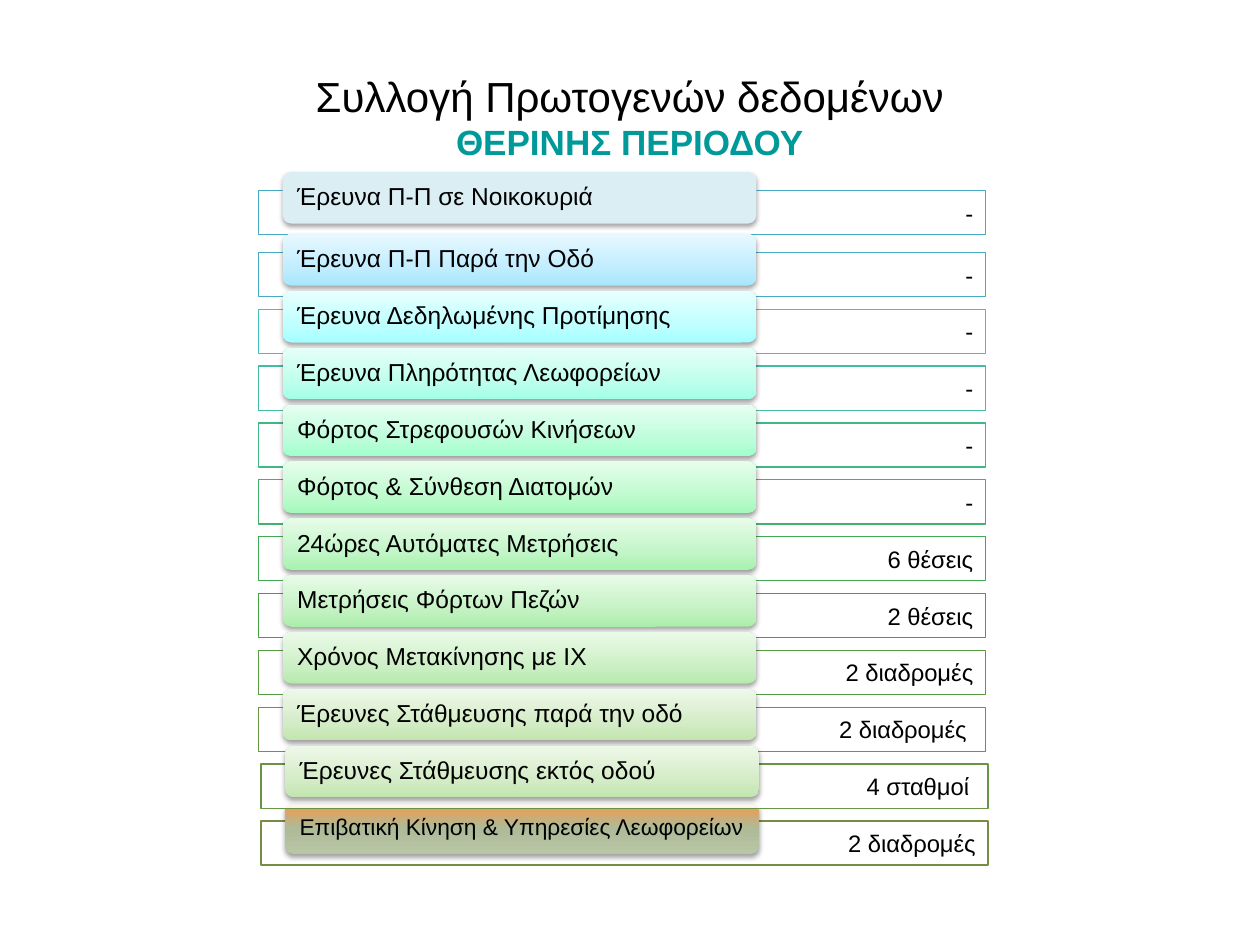
from lxml import etree
from pptx import Presentation
from pptx import util as u
from pptx.dml.color import RGBColor
from pptx.enum import shapes, text
from pptx.oxml import parse_xml
from pptx.oxml.ns import nsdecls, qn

# Name, value, bar line, tab fill as (position, colour) stops or one colour
ROWS = [
    ("Έρευνα Π-Π σε Νοικοκυριά", "-", "46AAC5", "DBEEF4"),
    ("Έρευνα Π-Π Παρά την Οδό", "-", "46AAC5",
     [(0, "A7E6FF"), (35, "C1EDFF"), (100, "E7F8FF")]),
    ("Έρευνα Δεδηλωμένης Προτίμησης", "-", "43C1C1",
     [(0, "A5FFFF"), (35, "BFFFFF"), (100, "E7FFFF")]),
    ("Έρευνα Πληρότητας Λεωφορείων", "-", "42BDA3",
     [(0, "A3FFE5"), (35, "BEFFEC"), (100, "E6FFF7")]),
    ("Φόρτος Στρεφουσών Κινήσεων", "-", "40B885",
     [(0, "A1FFCC"), (35, "BEFDDB"), (100, "E6FFF1")]),
    ("Φόρτος & Σύνθεση Διατομών", "-", "41B16B",
     [(0, "A4F9BB"), (35, "C0FACF"), (100, "E6FEEC")]),
    ("24ώρες Αυτόματες Μετρήσεις", "6 θέσεις", "41A952",
     [(0, "A7F3AF"), (35, "C2F5C7"), (100, "E7FCE9")]),
    ("Μετρήσεις Φόρτων Πεζών", "2 θέσεις", "45A242",
     [(0, "ABEEAA"), (35, "C5F2C4"), (100, "E8FBE8")]),
    ("Χρόνος Μετακίνησης με ΙΧ", "2 διαδρομές", "589C42",
     [(0, "B6EAAC"), (35, "CCEFC5"), (100, "EBFAE8")]),
    ("Έρευνες Στάθμευσης παρά την οδό", "2 διαδρομές ", "679543",
     [(0, "C2E5AE"), (35, "D4ECC7"), (100, "EEF8E9")]),
    ("Έρευνες Στάθμευσης εκτός οδού", "4 σταθμοί ", "679543",
     [(0, "C2E5AE"), (35, "D4ECC7"), (100, "EEF8E9")]),
    ("Επιβατική Κίνηση & Υπηρεσίες Λεωφορείων", "2 διαδρομές", "758E43",
     [(0, "B9C6A5"), (50, "ADBB99"), (100, "F79646")]),
]
HEADER_TOP, FIRST_TOP, LAST_TOP = 3.47, 4.72, 16.18
PITCH = (LAST_TOP - FIRST_TOP) / (len(ROWS) - 2)


def rgb(value):
    return RGBColor.from_string(value)


class SlideBuilder:
    font = "Arial"
    ink = "000000"

    def __init__(self, s):
        self.s = s

    def style_run(self, r, size, color=ink, bold=False):
        r.font.name = self.font
        r.font.size = u.Pt(size)
        r.font.bold = bold
        r.font.color.rgb = rgb(color)

    def title(self, main, period):
        sp = self.s.shapes.add_textbox(u.Cm(3.08), u.Cm(1.32), u.Cm(19.23), u.Cm(2.06))
        tf = sp.text_frame
        tf.word_wrap = True
        tf.vertical_anchor = text.MSO_ANCHOR.MIDDLE
        tf.text = main + "\v" + period
        p = tf.paragraphs[0]
        p.alignment = text.PP_ALIGN.CENTER
        self.style_run(p.runs[0], 24)
        self.style_run(p.runs[1], 20, "009999", True)

    def box(self, kind, left, top, width, height, label, size, align):
        sp = self.s.shapes.add_shape(kind, u.Cm(left), u.Cm(top), u.Cm(width), u.Cm(height))
        sp.shadow.inherit = False
        tf = sp.text_frame
        tf.word_wrap = True
        tf.vertical_anchor = text.MSO_ANCHOR.MIDDLE
        tf.text = label
        p = tf.paragraphs[0]
        p.alignment = align
        self.style_run(p.runs[0], size)
        return sp

    def bar(self, left, top, label, line):
        sp = self.box(shapes.MSO_SHAPE.RECTANGLE, left, top, 14.66, 0.89,
                      label, 13.6, text.PP_ALIGN.RIGHT)
        sp.fill.solid()
        sp.fill.fore_color.rgb = rgb("FFFFFF")
        color = sp._element.spPr.find(qn("a:solidFill"))[0]
        etree.SubElement(color, qn("a:alpha"), val="90000")
        sp.line.color.rgb = rgb(line)
        sp.line.width = u.Pt(0.75)

    def tab(self, left, top, label, size, fill):
        sp = self.box(shapes.MSO_SHAPE.ROUNDED_RECTANGLE, left, top, 9.55, 1.04,
                      label, size, text.PP_ALIGN.LEFT)
        tf = sp.text_frame
        tf.margin_left = u.Cm(0.24)
        tf.margin_right = u.Cm(0.1)
        tf.margin_top = tf.margin_bottom = u.Cm(0.03)
        tf.paragraphs[0].line_spacing = 0.9
        sp.line.fill.background()
        if isinstance(fill, str):
            sp.fill.solid()
            sp.fill.fore_color.rgb = rgb(fill)
        else:
            self.gradient(sp, fill)
        self.drop_shadow(sp)

    def gradient(self, sp, stops):
        """Fill a shape with colour stops running from bottom to top."""
        sp.fill.gradient()
        sp.fill.gradient_angle = 90
        stop_list = sp._element.spPr.find(qn("a:gradFill")).find(qn("a:gsLst"))
        for old in list(stop_list):
            stop_list.remove(old)
        for pos, color in stops:
            gs = etree.SubElement(stop_list, qn("a:gs"), pos=str(pos * 1000))
            etree.SubElement(gs, qn("a:srgbClr"), val=color)

    def drop_shadow(self, sp):
        effects = sp._element.spPr.find(qn("a:effectLst"))
        effects.append(parse_xml(
            f'<a:outerShdw {nsdecls("a")} blurRad="{u.Pt(3.1)}" dist="{u.Pt(1.6)}" '
            'dir="5400000" rotWithShape="0"><a:srgbClr val="000000">'
            '<a:alpha val="38000"/></a:srgbClr></a:outerShdw>'))

    def row(self, i):
        name, value, line, fill = ROWS[i]
        top = FIRST_TOP + (i - 1) * PITCH if i else HEADER_TOP
        shift = 0.05 if i >= 10 else 0
        self.bar(5.21 + shift, top + 0.37, value, line)
        self.tab(5.7 + shift, top, name, 13 if i == 11 else 14, fill)


def main():
    prs = Presentation()
    prs.slide_width, prs.slide_height = u.Cm(25.4), u.Cm(19.05)
    slide = SlideBuilder(prs.slides.add_slide(prs.slide_layouts[6]))
    slide.title("Συλλογή Πρωτογενών δεδομένων", "ΘΕΡΙΝΗΣ ΠΕΡΙΟΔΟΥ")
    # The next-to-last row lies over the last one
    for i in [*range(10), 11, 10]:
        slide.row(i)
    prs.save("out.pptx")


if __name__ == "__main__":
    main()
